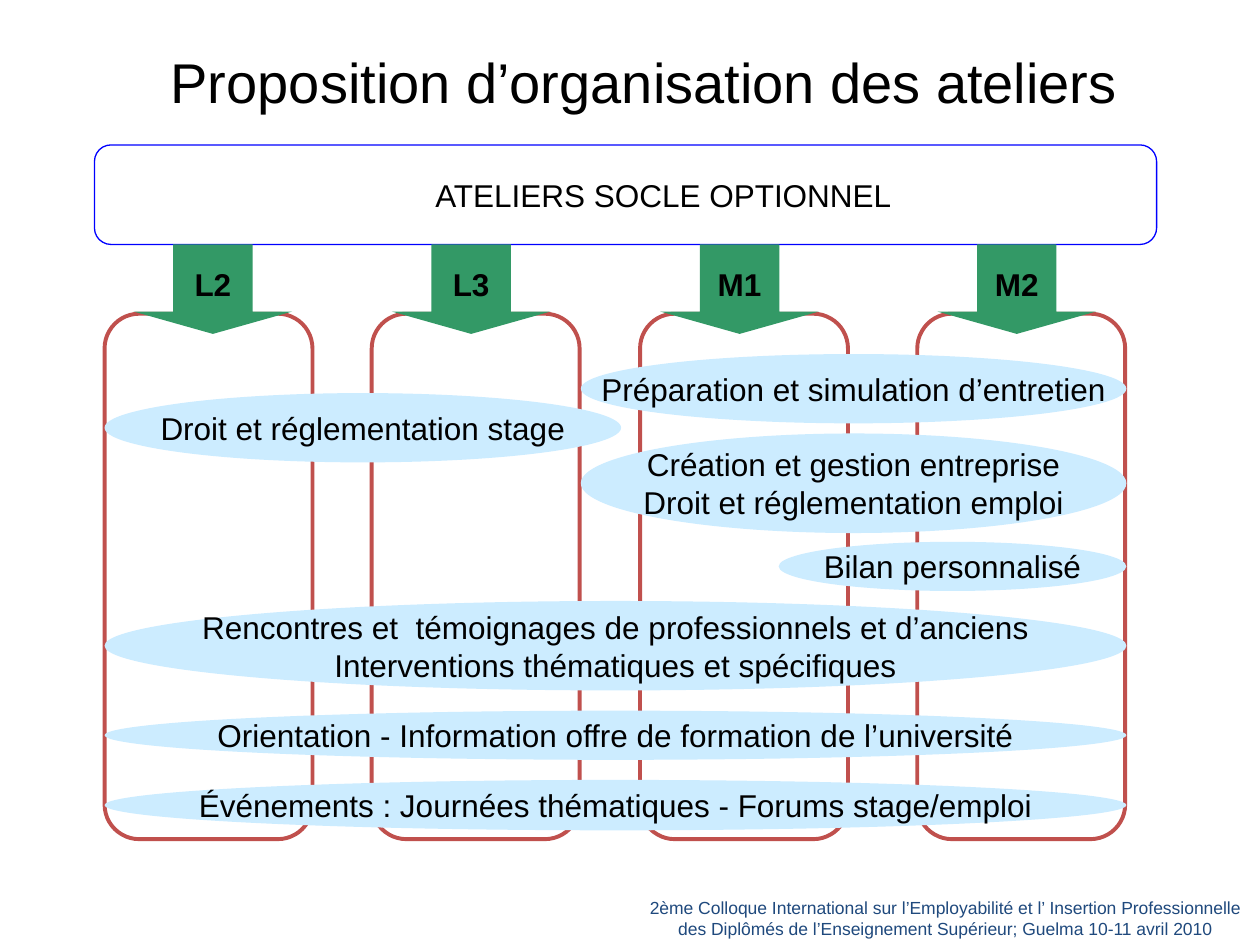
from pptx import Presentation
from pptx.dml.color import RGBColor
from pptx.enum import shapes, text
from pptx.util import Inches, Pt

BLACK = RGBColor(0x00, 0x00, 0x00)
RED = RGBColor(0xC0, 0x50, 0x4D)
BLUE = RGBColor(0x00, 0x00, 0xFF)
GREEN = RGBColor(0x33, 0x99, 0x66)
PALE = RGBColor(0xCC, 0xEC, 0xFF)
NAVY = RGBColor(0x1F, 0x49, 0x7D)
KIND = shapes.MSO_SHAPE


def write(sp, lines, size=18, color=BLACK, bold=False, wrap=False):
    tf = sp.text_frame
    tf.word_wrap = wrap
    tf.vertical_anchor = text.MSO_ANCHOR.MIDDLE
    tf.text = lines
    font = {"name": "Arial", "size": Pt(size), "bold": bold}
    for p in tf.paragraphs:
        p.alignment = text.PP_ALIGN.CENTER
        for r in p.runs:
            for key, value in font.items():
                setattr(r.font, key, value)
            r.font.color.rgb = color


def add_shape(kind, box, fill=None, line=None, width=0.75):
    sp = s.shapes.add_shape(kind, *[Inches(v) for v in box])
    sp.shadow.inherit = False
    if fill is None:
        sp.fill.background()
    else:
        sp.fill.solid()
        sp.fill.fore_color.rgb = fill
    if line is None:
        sp.line.fill.background()
    else:
        sp.line.color.rgb = line
        sp.line.width = Pt(width)
    return sp


prs = Presentation()
prs.slide_width, prs.slide_height = Inches(10), Inches(7.5)
s = prs.slides.add_slide(prs.slide_layouts[5])

title = s.shapes.title
title.left, title.top = Inches(0.43), Inches(0.3)
title.width, title.height = Inches(9.37), Inches(0.69)
write(title, "Proposition d’organisation des ateliers", size=32, wrap=True)

for left in (0.83, 2.95, 5.08, 7.28):
    add_shape(KIND.FLOWCHART_ALTERNATE_PROCESS, (left, 2.49, 1.65, 4.17), line=RED, width=2.25)

base = add_shape(KIND.FLOWCHART_ALTERNATE_PROCESS, (0.75, 1.15, 8.43, 0.79), line=BLUE)
write(base, "ATELIERS SOCLE OPTIONNEL", wrap=True)
base.text_frame.margin_left = Inches(0.7)

for level, left in (("L2", 1.06), ("L3", 3.11), ("M1", 5.24), ("M2", 7.44)):
    arrow = add_shape(KIND.DOWN_ARROW, (left, 1.94, 1.26, 0.71), fill=GREEN)
    arrow.adjustments[0], arrow.adjustments[1] = 0.5, 0.25
    write(arrow, level, bold=True)

workshops = [
    ("Événements : Journées thématiques - Forums stage/emploi", (0.83, 6.19, 8.11, 0.4)),
    ("Droit et réglementation stage", (0.83, 3.12, 4.1, 0.55)),
    ("Création et gestion entreprise\nDroit et réglementation emploi", (4.61, 3.44, 4.33, 0.79)),
    ("Préparation et simulation d’entretien", (4.61, 2.81, 4.33, 0.55)),
    ("Rencontres et  témoignages de professionnels et d’anciens\n"
     "Interventions thématiques et spécifiques", (0.83, 4.77, 8.11, 0.71)),
    ("Orientation - Information offre de formation de l’université", (0.83, 5.64, 8.11, 0.39)),
    ("Bilan personnalisé", (6.18, 4.3, 2.76, 0.39)),
]
for label, box in workshops:
    write(add_shape(KIND.OVAL, box, fill=PALE), label)

footer = s.shapes.add_textbox(Inches(5), Inches(7.07), Inches(5), Inches(0.43))
write(footer, "2ème Colloque International sur l’Employabilité et l’ Insertion Professionnelle\n"
      "des Diplômés de l’Enseignement Supérieur; Guelma 10-11 avril 2010",
      size=10, color=NAVY, wrap=True)

prs.save("out.pptx")
